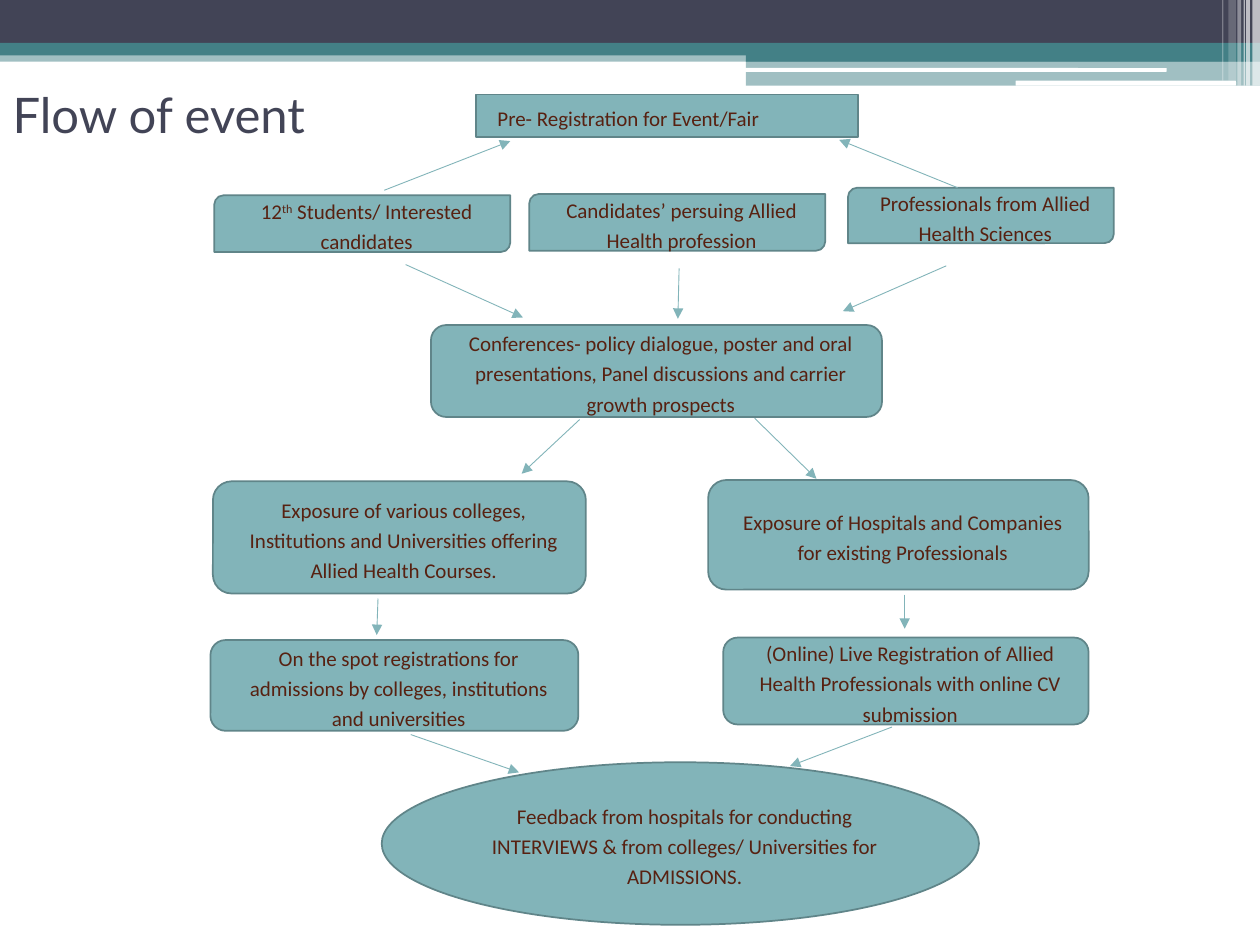
import pptx
import pptx.util
import pptx.dml.color
import pptx.enum.shapes
import pptx.enum.text
import pptx.oxml.ns
from lxml import etree

Pt = pptx.util.Pt
SHAPE = pptx.enum.shapes.MSO_SHAPE
ALIGN = pptx.enum.text.PP_ALIGN
MIDDLE = pptx.enum.text.MSO_ANCHOR.MIDDLE
qn = pptx.oxml.ns.qn

COLS, ROWS = 100, 75  # slide grid
NAVY, TEAL, WHITE = "424456", "438086", "FFFFFF"
BOX, EDGE, INK = "82B4B9", "608589", "572111"


def rgb(value):
    return pptx.dml.color.RGBColor.from_string(value)


class Deck:
    """Holds the style and the current slide."""
    body = {"name": "Calibri", "size": Pt(12), "bold": False}
    heading = {"name": "Lato", "size": Pt(28), "bold": False}
    para = {"line_spacing": 1.2, "space_after": Pt(12)}

    def __init__(self, prs):
        self.col, self.row = prs.slide_width / COLS, prs.slide_height / ROWS
        self.s = prs.slides.add_slide(prs.slide_layouts[5])

    def grid(self, *lengths):
        return [round(n * (self.row if i % 2 else self.col))
                for i, n in enumerate(lengths)]

    def run(self, p, text, style, color, baseline=0):
        r = p.add_run()
        r.text = text
        for key, value in style.items():
            setattr(r.font, key, value)
        r.font.color.rgb = rgb(color)
        if baseline:
            r.font._element.set("baseline", str(baseline * 1000))

    def title(self, text, at):
        sp = self.s.shapes.title
        sp.left, sp.top, sp.width, sp.height = self.grid(*at)
        sp.text_frame.vertical_anchor = MIDDLE
        p = sp.text_frame.paragraphs[0]
        p.alignment = ALIGN.LEFT
        self.run(p, text, self.heading, NAVY)

    def shape(self, kind, at, fill, alpha=100):
        sp = self.s.shapes.add_shape(kind, *self.grid(*at))
        sp.shadow.inherit = False
        sp.fill.solid()
        sp.fill.fore_color.rgb = rgb(fill)
        sp.line.fill.background()
        if alpha < 100:
            color = sp._element.spPr.find(qn("a:solidFill"))[0]
            etree.SubElement(color, qn("a:alpha")).set("val", str(alpha * 1000))
        return sp

    def box(self, kind, at, *runs, align=ALIGN.CENTER):
        sp = self.shape(kind, at, BOX)
        sp.line.color.rgb = rgb(EDGE)
        sp.line.width = Pt(1)
        tf = sp.text_frame
        tf.word_wrap = True
        tf.vertical_anchor = MIDDLE
        p = tf.paragraphs[0]
        p.alignment = align
        for key, value in self.para.items():
            setattr(p, key, value)
        p._p.get_or_add_pPr().set("marL", str(pptx.util.Inches(0.07)))
        for text, *baseline in runs:
            self.run(p, text, self.body, INK, *baseline)

    def arrow(self, *ends):
        c = self.s.shapes.add_connector(
            pptx.enum.shapes.MSO_CONNECTOR.STRAIGHT, *self.grid(*ends))
        c.line.color.rgb = rgb(BOX)
        c.line.width = Pt(0.5)
        etree.SubElement(c.line._get_or_add_ln(), qn("a:tailEnd")).set("type", "triangle")
        etree.SubElement(c._element.spPr, qn("a:effectLst"))


def main():
    prs = pptx.Presentation()
    prs.slide_width, prs.slide_height = pptx.util.Inches(10), pptx.util.Inches(7.5)
    d = Deck(prs)
    rect, rounded, diag = SHAPE.RECTANGLE, SHAPE.ROUNDED_RECTANGLE, SHAPE.ROUND_2_DIAG_RECTANGLE

    # Header bands
    for at, fill, alpha in [((0, 4, 100, 0.9), TEAL, 50),
                            ((0, 0, 100, 3.4), NAVY, 100),
                            ((0, 3.4, 100, 1), TEAL, 100),
                            ((59.2, 3.9, 40.8, 1), TEAL, 100),
                            ((59.2, 4.8, 40.8, 2), TEAL, 50)]:
        d.shape(rect, at, fill, alpha)
    for at in [(59.1, 5.4, 33.5, 0.3), (80.6, 6.4, 17.5, 0.4)]:
        d.shape(rounded, at, WHITE)

    # Translucent stripes at the right end: left, width, height, alpha
    for x, w, h, alpha in [(99.4, 0.6, 6.8, 65), (98.9, 0.3, 6.8, 65),
                           (98.7, 0.1, 6.8, 60), (98.2, 0.3, 6.8, 40),
                           (97.5, 0.6, 6.4, 20), (97, 0.1, 6.4, 30)]:
        d.shape(rect, (x, 0, w, h), WHITE, alpha)

    d.title("Flow of event", (0, 3.2, 90, 11.7))

    # Registration and the three audiences
    d.box(rect, (37.8, 7.5, 30.3, 3.4), ("Pre- Registration for Event/Fair",),
          align=ALIGN.LEFT)
    d.box(diag, (17, 15.5, 23.5, 4.5),
          ("12",), ("th", 30), (" Students/ Interested candidates",))
    d.box(diag, (42, 15.4, 23.5, 4.5), ("Candidates’ persuing Allied Health profession",))
    d.box(diag, (67.3, 14.9, 21.1, 4.4), ("Professionals from Allied Health Sciences",))

    # Event stages
    for at, text in [
        ((34.2, 25.8, 35.8, 7.3), "Conferences- policy dialogue, poster and oral "
         "presentations, Panel discussions and carrier growth prospects"),
        ((16.9, 38.2, 29.6, 8.9), "Exposure of various colleges, Institutions and "
         "Universities offering Allied Health Courses."),
        ((56.2, 38.1, 30.2, 8.7), "Exposure of Hospitals and Companies for existing "
         "Professionals"),
        ((16.7, 50.8, 29.2, 7.2), "On the spot registrations for admissions by "
         "colleges, institutions and universities"),
        ((57.4, 50.6, 29, 6.9), "(Online) Live Registration of Allied Health "
         "Professionals with online CV submission"),
    ]:
        d.box(rounded, at, (text,))

    # Outcome
    d.box(SHAPE.OVAL, (30.3, 60.5, 47.4, 12.9),
          ("Feedback from hospitals for conducting INTERVIEWS & from colleges/ "
           "Universities for ADMISSIONS.",))

    # Arrows between the levels
    for ends in [(30.5, 15.1, 40.5, 11.2), (76, 14.9, 66.6, 11.1),
                 (32.2, 21, 41.5, 25.2), (53.9, 21.3, 53.8, 25.3), (75.1, 21.1, 66.9, 24.7),
                 (46, 33.3, 41.4, 37.6), (59.9, 33.2, 64.8, 38),
                 (30, 47.5, 29.9, 50.4), (71.8, 47.2, 71.8, 49.9),
                 (32.6, 58.3, 41.2, 61.3), (70.8, 57.7, 62.7, 60.8)]:
        d.arrow(*ends)

    prs.save("out.pptx")


if __name__ == "__main__":
    main()
